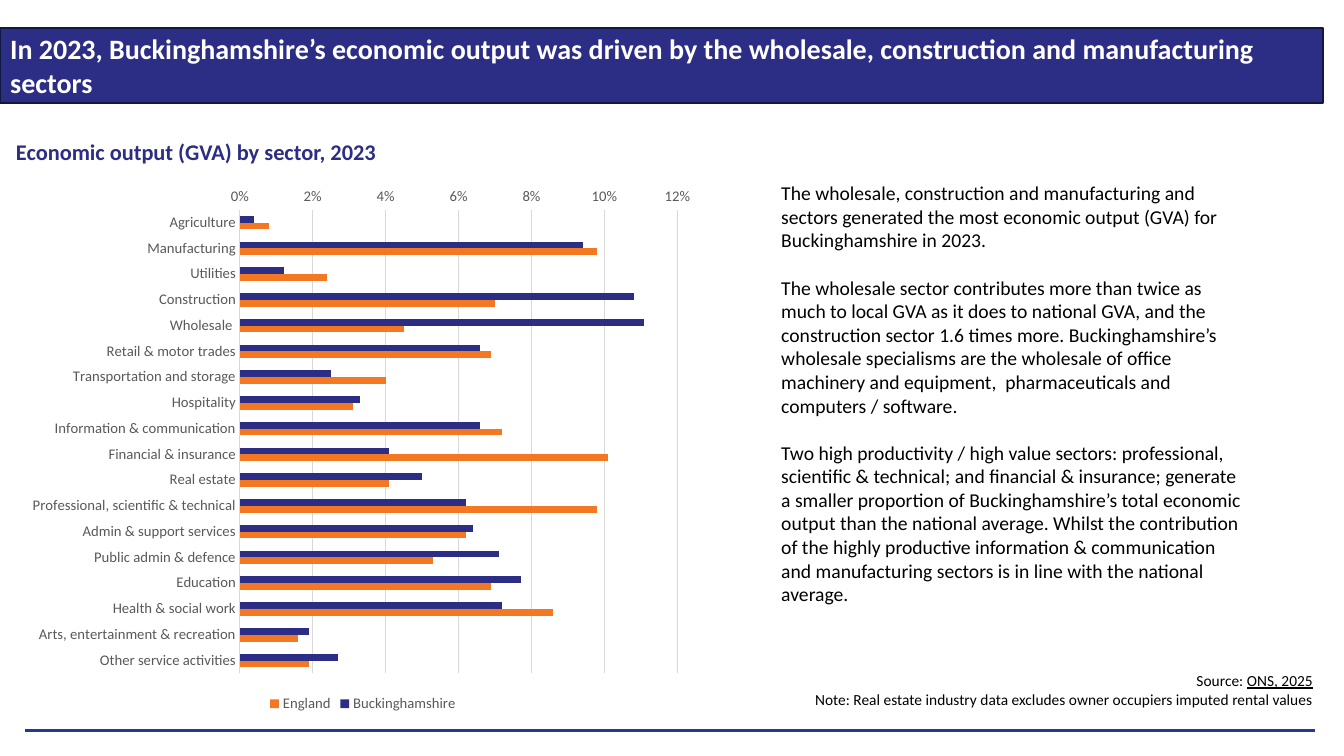
from dataclasses import dataclass

from lxml import etree
from pptx import Presentation
from pptx import util as u
from pptx.chart.data import CategoryChartData
from pptx.dml.color import RGBColor
from pptx.enum import chart as ch, shapes, text
from pptx.oxml import parse_xml
from pptx.oxml.ns import nsdecls, qn


@dataclass(frozen=True)
class Theme:
    font: str = "Calibri"
    navy: str = "2C2D84"
    navy_edge: str = "101940"
    rule: str = "253993"
    orange: str = "F47721"
    grey: str = "595959"
    grid: str = "D9D9D9"
    black: str = "000000"
    white: str = "FFFFFF"
    title: float = 20
    heading: float = 16
    body: float = 14
    note: float = 11
    chart: float = 10.5


THEME = Theme()

HEADLINE = ("In 2023, Buckinghamshire’s economic output was driven by the "
            "wholesale, construction and manufacturing sectors")

COMMENTARY = [
    "The wholesale, construction and manufacturing and sectors generated the "
    "most economic output (GVA) for Buckinghamshire in 2023.",
    "The wholesale sector contributes more than twice as much to local GVA as "
    "it does to national GVA, and the construction sector 1.6 times more. "
    "Buckinghamshire’s wholesale specialisms are the wholesale of office "
    "machinery and equipment,  pharmaceuticals and computers / software.",
    "Two high productivity / high value sectors: professional, scientific & "
    "technical; and financial & insurance; generate a smaller proportion of "
    "Buckinghamshire’s total economic output than the national average. Whilst "
    "the contribution of the highly productive information & communication and "
    "manufacturing sectors is in line with the national average.",
]

# Sector, Buckinghamshire share, England share
SECTORS = [
    ("Agriculture", 0.004, 0.008),
    ("Manufacturing", 0.094, 0.098),
    ("Utilities", 0.012, 0.024),
    ("Construction", 0.108, 0.07),
    ("Wholesale ", 0.111, 0.045),
    ("Retail & motor trades", 0.066, 0.069),
    ("Transportation and storage", 0.025, 0.04),
    ("Hospitality", 0.033, 0.031),
    ("Information & communication", 0.066, 0.072),
    ("Financial & insurance", 0.041, 0.101),
    ("Real estate", 0.05, 0.041),
    ("Professional, scientific & technical", 0.062, 0.098),
    ("Admin & support services", 0.064, 0.062),
    ("Public admin & defence", 0.071, 0.053),
    ("Education", 0.077, 0.069),
    ("Health & social work", 0.072, 0.086),
    ("Arts, entertainment & recreation", 0.019, 0.016),
    ("Other service activities", 0.027, 0.019),
]


def rgb(value):
    return RGBColor.from_string(value)


def style_font(font, size, color, bold=False):
    font.name = THEME.font
    font.size = u.Pt(size)
    font.bold = bold
    font.color.rgb = rgb(color)


def style_line(line, color, width):
    line.color.rgb = rgb(color)
    line.width = u.Pt(width)


def place(shape, left, top, width, height):
    shape.left, shape.top = u.Inches(left), u.Inches(top)
    shape.width, shape.height = u.Inches(width), u.Inches(height)


def add_headline(slide):
    banner = slide.shapes.title
    place(banner, 0, 0.28, 13.12, 0.74)
    banner.fill.solid()
    banner.fill.fore_color.rgb = rgb(THEME.navy)
    style_line(banner.line, THEME.navy_edge, 1.5)
    frame = banner.text_frame
    frame.text = HEADLINE
    frame.word_wrap = True
    frame.auto_size = text.MSO_AUTO_SIZE.NONE
    frame.vertical_anchor = text.MSO_ANCHOR.MIDDLE
    frame.paragraphs[0].alignment = text.PP_ALIGN.LEFT
    style_font(frame.paragraphs[0].font, THEME.title, THEME.white, bold=True)


def add_text(slide, box, paragraphs, size, color, bold=False,
             align=text.PP_ALIGN.LEFT, gap=0):
    """Each paragraph is a list of (wording, underlined) runs."""
    frame = slide.shapes.add_textbox(*map(u.Inches, box)).text_frame
    frame.word_wrap = True
    for index, runs in enumerate(paragraphs):
        paragraph = frame.add_paragraph() if index else frame.paragraphs[0]
        for wording, underlined in runs:
            run = paragraph.add_run()
            run.text = wording
            if underlined:
                run.font.underline = True
        paragraph.alignment = align
        if index and gap:
            paragraph.space_before = u.Pt(gap)
        style_font(paragraph.font, size, color, bold)


def add_footer_rule(slide):
    rule = slide.shapes.add_connector(
        shapes.MSO_CONNECTOR.STRAIGHT,
        u.Inches(0.25), u.Inches(7.25), u.Inches(13.04), u.Inches(7.25))
    style_line(rule.line, THEME.rule, 2.25)
    etree.SubElement(rule._element.spPr, qn("a:effectLst"))


def fix_plot_area(chart, x, y, w, h):
    """Pin the inner plot area, in fractions of the chart."""
    plot_area = chart._chartSpace.chart.plotArea
    for layout in plot_area.findall(qn("c:layout")):
        plot_area.remove(layout)
    sizes = "".join(f'<c:{key} val="{value}"/>'
                    for key, value in zip("xywh", (x, y, w, h)))
    plot_area.insert(0, parse_xml(
        f'<c:layout {nsdecls("c")}><c:manualLayout>'
        '<c:layoutTarget val="inner"/><c:xMode val="edge"/>'
        f'<c:yMode val="edge"/>{sizes}</c:manualLayout></c:layout>'))


def add_sector_chart(slide):
    names, local, national = zip(*SECTORS)
    data = CategoryChartData(number_format="0%")
    data.categories = names
    data.add_series("Buckinghamshire", local)
    data.add_series("England", national)
    chart = slide.shapes.add_chart(
        ch.XL_CHART_TYPE.BAR_CLUSTERED,
        *map(u.Inches, (0.21, 1.76, 6.78, 5.35)), data).chart
    chart.has_title = False
    style_font(chart.font, THEME.chart, THEME.black)
    fix_plot_area(chart, 0.32, 0.06, 0.64, 0.86)

    # Bars
    plot = chart.plots[0]
    plot.gap_width = 182
    plot.vary_by_categories = False
    for series, color in zip(plot.series, (THEME.navy, THEME.orange)):
        series.format.fill.solid()
        series.format.fill.fore_color.rgb = rgb(color)
        series.invert_if_negative = False

    # Axes
    sectors, shares = chart.category_axis, chart.value_axis
    for axis in (sectors, shares):
        axis.major_tick_mark = axis.minor_tick_mark = ch.XL_TICK_MARK.NONE
        style_font(axis.tick_labels.font, THEME.chart, THEME.grey)
    sectors.reverse_order = True
    style_line(sectors.format.line, THEME.grid, 0.75)
    shares.minimum_scale, shares.maximum_scale = 0, 0.12
    shares.major_unit = 0.02
    shares.tick_labels.number_format = "0%"
    shares.tick_labels.number_format_is_linked = False
    shares.format.line.fill.background()
    style_line(shares.major_gridlines.format.line, THEME.grid, 0.75)

    # Legend
    chart.has_legend = True
    chart.legend.position = ch.XL_LEGEND_POSITION.BOTTOM
    chart.legend.include_in_layout = False
    style_font(chart.legend.font, THEME.chart, THEME.grey)


def main():
    deck = Presentation()
    deck.slide_width, deck.slide_height = u.Inches(13.33), u.Inches(7.5)
    slide = deck.slides.add_slide(deck.slide_layouts[5])

    add_footer_rule(slide)
    add_headline(slide)
    add_text(slide, (0.06, 1.32, 4.57, 0.37),
             [[("Economic output (GVA) by sector, 2023", False)]],
             THEME.heading, THEME.navy, bold=True)
    add_text(slide, (5.68, 6.61, 7.44, 0.47),
             [[("Source: ", False), ("ONS, 2025", True)],
              [("Note: Real estate industry data excludes owner occupiers "
                "imputed rental values", False)]],
             THEME.note, THEME.black, align=text.PP_ALIGN.RIGHT)
    add_text(slide, (7.65, 1.75, 4.81, 4.34),
             [[(wording, False)] for wording in COMMENTARY],
             THEME.body, THEME.black, gap=17)
    add_sector_chart(slide)
    deck.save("out.pptx")


if __name__ == "__main__":
    main()
